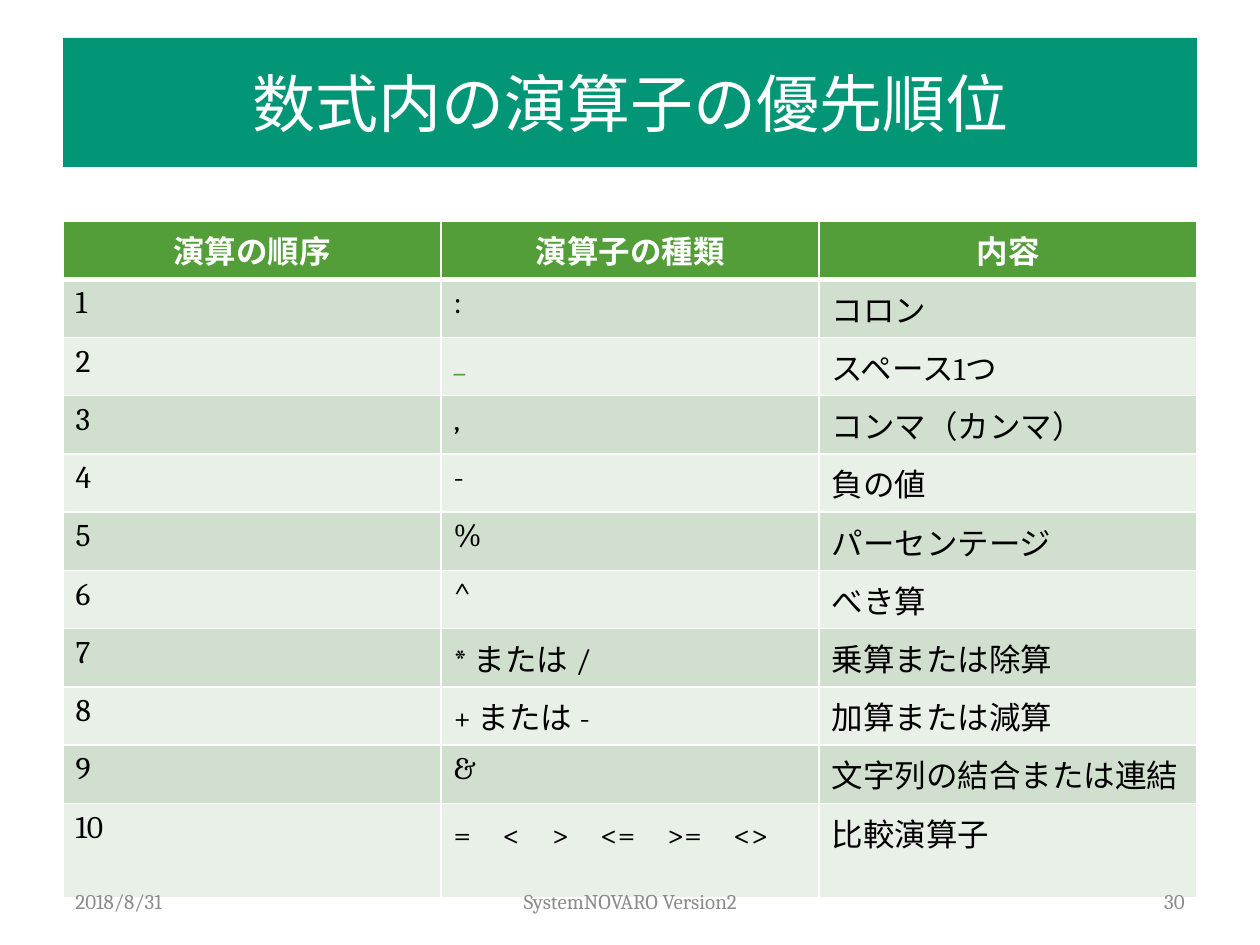
from lxml import etree
from pptx import Presentation
from pptx.dml.color import RGBColor
from pptx.enum.text import MSO_ANCHOR, PP_ALIGN
from pptx.oxml.ns import qn
from pptx.util import Emu, Pt

LEFT, CENTER, RIGHT = PP_ALIGN.LEFT, PP_ALIGN.CENTER, PP_ALIGN.RIGHT
TOP, MIDDLE = MSO_ANCHOR.TOP, MSO_ANCHOR.MIDDLE
EMU_PER_PX = 914400 / 126
FONT = "Cambria"
COLORS = {
    "title": "029676",
    "header": "549E39",
    "odd": "D1DFCE",
    "even": "E9F0E8",
    "white": "FFFFFF",
    "black": "000000",
    "footer": "8C8C8C",
}
MARGIN, CONTENT_WIDTH = 63, 1134
HEADINGS = ("演算の順序", "演算子の種類", "内容")
OPERATORS = (
    (":", "コロン"),
    ("_", "スペース1つ"),
    (",", "コンマ（カンマ）"),
    ("-", "負の値"),
    ("%", "パーセンテージ"),
    ("^", "べき算"),
    ("* または /", "乗算または除算"),
    ("+ または -", "加算または減算"),
    ("&", "文字列の結合または連結"),
    ("=　<　>　<=　>=　<>", "比較演算子"),
)
FOOTERS = (
    (63, 294, "2018/8/31", LEFT),
    (431, 399, "SystemNOVARO Version2", CENTER),
    (903, 294, "30", RIGHT),
)


def px(length):
    return Emu(round(length * EMU_PER_PX))


def color(name):
    return RGBColor.from_string(COLORS[name])


def write(frame, text, size, color_name, align=LEFT, bold=False):
    paragraph = frame.paragraphs[0]
    paragraph.alignment = align
    run = paragraph.add_run()
    run.text = text
    run.font.name = FONT
    run.font.size = Pt(size)
    run.font.bold = bold
    run.font.color.rgb = color(color_name)


def set_title(slide, text):
    title = slide.shapes.title
    title.left, title.top = px(MARGIN), px(38)
    title.width, title.height = px(CONTENT_WIDTH), px(129)
    title.fill.solid()
    title.fill.fore_color.rgb = color("title")
    title.text_frame.vertical_anchor = MIDDLE
    write(title.text_frame, text, 36, "white", CENTER)


def add_borders(cell, top, bottom):
    properties = cell._tc.get_or_add_tcPr()
    for side, width in (("L", 1), ("R", 1), ("T", top), ("B", bottom)):
        line = etree.SubElement(properties, qn(f"a:ln{side}"), w=str(Pt(width)))
        fill = etree.SubElement(line, qn("a:solidFill"))
        etree.SubElement(fill, qn("a:srgbClr"), val=COLORS["white"])


def fill_cell(cell, text, row_index):
    is_header = row_index == 0
    add_borders(cell, 3 if row_index == 1 else 1, 3 if is_header else 1)
    cell.fill.solid()
    if is_header:
        cell.fill.fore_color.rgb = color("header")
        cell.vertical_anchor = MIDDLE
        write(cell.text_frame, text, 18, "white", CENTER, True)
    else:
        cell.fill.fore_color.rgb = color("odd" if row_index % 2 else "even")
        cell.vertical_anchor = TOP
        write(cell.text_frame, text, 18, "header" if text == "_" else "black")


def add_precedence_table(slide):
    rows = [HEADINGS]
    rows += [(str(rank), *entry) for rank, entry in enumerate(OPERATORS, 1)]
    table = slide.shapes.add_table(
        len(rows), len(HEADINGS), px(MARGIN), px(221), px(CONTENT_WIDTH), px(51 * len(rows))
    ).table
    for row_index, texts in enumerate(rows):
        for column_index, text in enumerate(texts):
            fill_cell(table.cell(row_index, column_index), text, row_index)


def add_footer(slide, left, width, text, align):
    frame = slide.shapes.add_textbox(px(left), px(876), px(width), px(50)).text_frame
    frame.word_wrap = True
    frame.vertical_anchor = MIDDLE
    write(frame, text, 12, "footer", align)


def main():
    presentation = Presentation()
    presentation.slide_width, presentation.slide_height = px(1260), px(945)
    slide = presentation.slides.add_slide(presentation.slide_layouts[5])
    set_title(slide, "数式内の演算子の優先順位")
    add_precedence_table(slide)
    for footer in FOOTERS:
        add_footer(slide, *footer)
    presentation.save("out.pptx")


if __name__ == "__main__":
    main()
